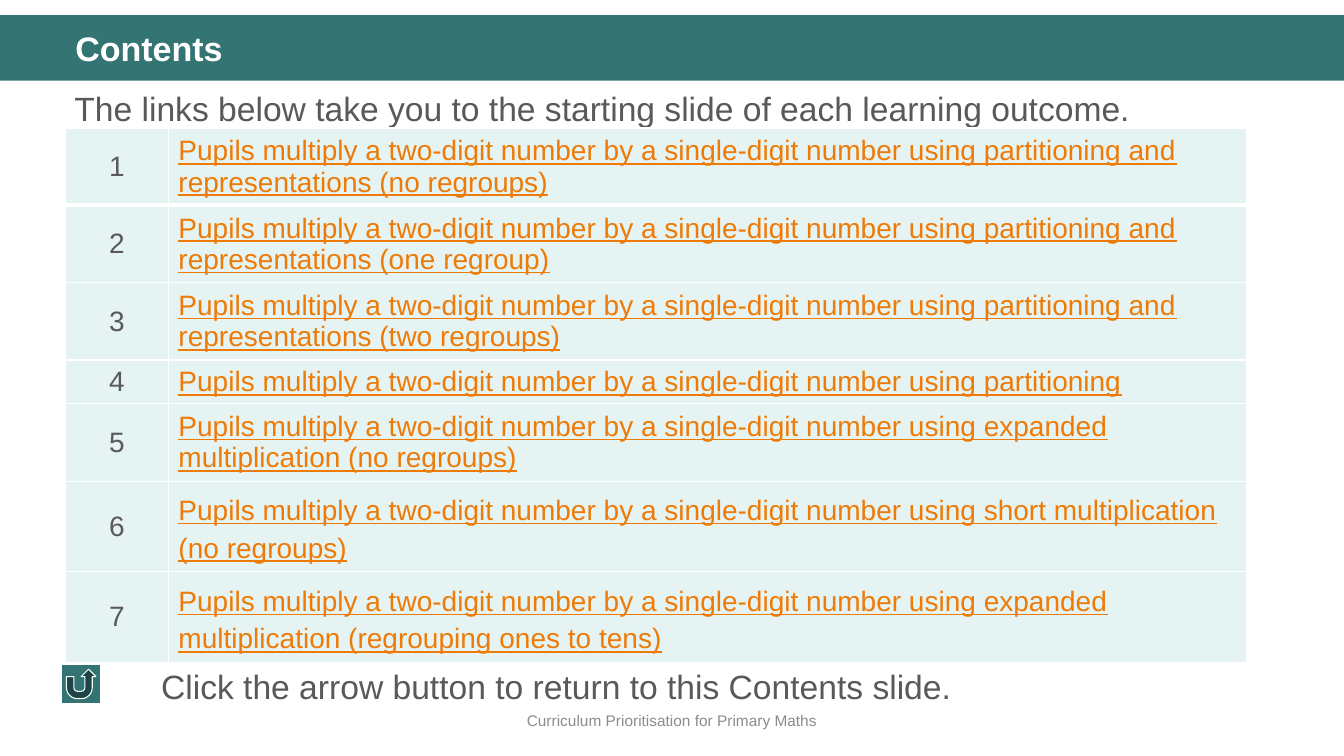
from lxml.etree import SubElement
from pptx import Presentation
from pptx.dml.color import RGBColor
from pptx.enum.shapes import MSO_SHAPE as Preset
from pptx.enum.text import MSO_ANCHOR as Anchor, PP_ALIGN as Align
from pptx.oxml.ns import qn
from pptx.util import Inches, Pt

TEAL, BUTTON_TEAL, PALE_TEAL = "347574", "327473", "E5F3F2"
ORANGE, GREY, FOOTER_GREY, WHITE = "EE7B08", "595959", "8C8C8C", "FFFFFF"

MULTIPLY = "Pupils multiply a two-digit number by a single-digit number using "
# Ending of each learning outcome, with its line spacing
OUTCOMES = [
    ("partitioning and representations (no regroups)", 1.0),
    ("partitioning and representations (one regroup)", 1.0),
    ("partitioning and representations (two regroups)", 1.0),
    ("partitioning", 1.0),
    ("expanded multiplication (no regroups)", 1.0),
    ("short multiplication (no regroups)", 1.2),
    ("expanded multiplication (regrouping ones to tens)", 1.2),
]


def color(hex_string):
    return RGBColor.from_string(hex_string)


class ContentsSlide:
    """Draws on one slide; all lengths are percentages of the slide's size."""

    font_name = "Arial"

    def __init__(self, presentation):
        self.width = presentation.slide_width
        self.height = presentation.slide_height
        self.slide = presentation.slides.add_slide(presentation.slide_layouts[6])

    def across(self, share):
        return round(self.width * share / 100)

    def down(self, share):
        return round(self.height * share / 100)

    def box(self, left, top, width, height):
        return self.across(left), self.down(top), self.across(width), self.down(height)

    def fill_frame(self, frame, text, size, ink, bold=None, underline=None,
                   align=Align.LEFT, spacing=1.0, before=0, anchor=Anchor.TOP):
        """Put one styled run of text into a text frame."""
        frame.word_wrap = True
        frame.vertical_anchor = anchor
        paragraph = frame.paragraphs[0]
        paragraph.alignment = align
        paragraph.line_spacing = spacing
        paragraph.space_before = Pt(before)
        run = paragraph.add_run()
        run.text = text
        font = run.font
        font.name, font.size = self.font_name, Pt(size)
        font.bold, font.underline = bold, underline
        font.color.rgb = color(ink)

    def text(self, place, text, size, ink, **style):
        shape = self.slide.shapes.add_textbox(*self.box(*place))
        self.fill_frame(shape.text_frame, text, size, ink, **style)

    def shape(self, preset, place, fill, line=None):
        shape = self.slide.shapes.add_shape(preset, *self.box(*place))
        shape.shadow.inherit = False
        shape.fill.solid()
        shape.fill.fore_color.rgb = color(fill)
        if line:
            shape.line.color.rgb = color(line)
            shape.line.width = Pt(0.75)
        else:
            shape.line.fill.background()

    def borders(self, cell, top, bottom):
        properties = cell._tc.get_or_add_tcPr()
        for side, points in (("L", 1), ("R", 1), ("T", top), ("B", bottom)):
            line = SubElement(properties, qn(f"a:ln{side}"), w=str(Pt(points)))
            fill = SubElement(line, qn("a:solidFill"))
            SubElement(fill, qn("a:srgbClr"), val=WHITE)

    def outcome_table(self, left, top, column_widths, row_height):
        place = left, top, sum(column_widths), row_height * len(OUTCOMES)
        table = self.slide.shapes.add_table(
            len(OUTCOMES), len(column_widths), *self.box(*place)).table
        table.first_row = table.horz_banding = False
        for column, width in zip(table.columns, column_widths):
            column.width = self.across(width)
        for index, (ending, spacing) in enumerate(OUTCOMES):
            table.rows[index].height = self.down(row_height)
            number, outcome = table.rows[index].cells
            for cell in (number, outcome):
                self.borders(cell, top=3 if index == 1 else 1,
                             bottom=3 if index == 0 else 1)
                cell.fill.solid()
                cell.fill.fore_color.rgb = color(PALE_TEAL)
                cell.vertical_anchor = Anchor.MIDDLE
            self.fill_frame(number.text_frame, str(index + 1), 20, GREY,
                            align=Align.CENTER, anchor=Anchor.MIDDLE)
            self.fill_frame(outcome.text_frame, MULTIPLY + ending, 20, ORANGE,
                            underline=True, spacing=spacing, anchor=Anchor.MIDDLE)


def main():
    presentation = Presentation()
    presentation.slide_width = Inches(13.33)
    presentation.slide_height = Inches(7.5)
    contents = ContentsSlide(presentation)

    contents.shape(Preset.RECTANGLE, (0, 2, 100, 8.67), TEAL)
    contents.text((0, 92.67, 100, 5.33), "Curriculum Prioritisation for Primary Maths",
                  11, FOOTER_GREY, align=Align.CENTER, anchor=Anchor.MIDDLE)
    contents.text((4.8, 9.87, 91.37, 46.8),
                  "The links below take you to the starting slide of each learning outcome.",
                  24, GREY, spacing=1.2, before=10)
    contents.outcome_table(4.88, 16.93, (7.65, 80.2), 5.47)
    contents.shape(Preset.ACTION_BUTTON_RETURN, (4.58, 87.87, 2.93, 5.2),
                   BUTTON_TEAL, line=WHITE)
    contents.text((11.25, 87.47, 84.92, 6.67),
                  "Click the arrow button to return to this Contents slide.", 24, GREY)
    contents.text((4.88, 3.6, 91.37, 6.27), "Contents", 24.3, WHITE,
                  bold=True, spacing=0.9)

    presentation.save("out.pptx")


if __name__ == "__main__":
    main()
